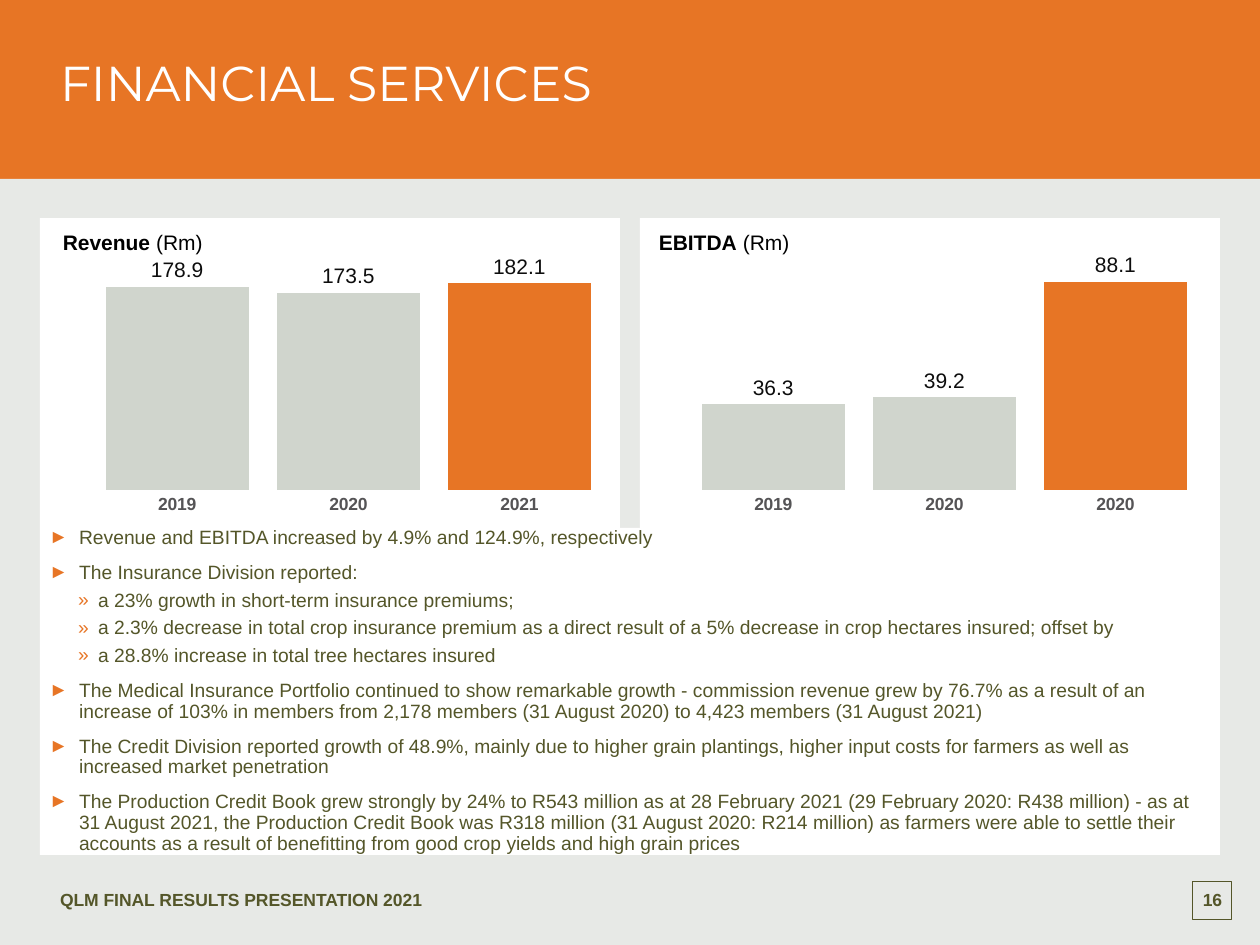
from lxml.etree import SubElement
from pptx import Presentation
from pptx.chart.data import CategoryChartData
from pptx.dml.color import RGBColor
from pptx.enum.chart import XL_CHART_TYPE, XL_LABEL_POSITION, XL_TICK_MARK
from pptx.enum.shapes import MSO_SHAPE
from pptx.enum.text import MSO_ANCHOR, MSO_AUTO_SIZE, PP_ALIGN
from pptx.oxml import parse_xml
from pptx.oxml.ns import nsdecls, qn
from pptx.util import Pt

PX = 914400 / 126
ORANGE, OLIVE, MIST, WHITE = "E77525", "545629", "E7E9E6", "FFFFFF"


def style(font, size, color, bold=False, name="Arial"):
    font.size, font.bold, font.name = Pt(size), bold, name
    font.color.rgb = RGBColor.from_string(color)


def layout(x, y, extra=""):
    return parse_xml(
        f'<c:layout {nsdecls("c")}><c:manualLayout>{extra}'
        f'<c:xMode val="edge"/><c:yMode val="edge"/><c:x val="{x}"/><c:y val="{y}"/>'
        + ('<c:w val="0.94"/><c:h val="0.717"/>' if extra else "")
        + "</c:manualLayout></c:layout>")


deck = Presentation()
deck.slide_width, deck.slide_height = round(1260 * PX), round(945 * PX)
slide = deck.slides.add_slide(deck.slide_layouts[5])
shapes = slide.shapes

blocks = [
    (0, 0, 1260, 179, ORANGE),
    (0, 179, 1260, 766, MIST),
    (640, 218, 580, 637, WHITE),
    (40, 218, 580, 637, WHITE),
    (49, 528, 1168, 327, WHITE),
    (1193, 881, 39, 39, None),
]
for *box, color in blocks:
    block = shapes.add_shape(MSO_SHAPE.RECTANGLE, *[round(n * PX) for n in box])
    block.shadow.inherit = False
    if color:
        block.fill.solid()
        block.fill.fore_color.rgb = RGBColor.from_string(color)
        block.line.fill.background()
    else:
        block.fill.background()
        block.line.color.rgb = RGBColor.from_string(OLIVE)
        block.line.width = Pt(0.5)

title = shapes.title
title.element.getparent().append(title.element)
body = shapes.add_textbox(0, 0, 0, 0)
footer = shapes.add_textbox(0, 0, 0, 0)
number = shapes.add_textbox(0, 0, 0, 0)

points = [
    (0, "Revenue and EBITDA increased by 4.9% and 124.9%, respectively"),
    (0, "The Insurance Division reported:"),
    (1, "a 23% growth in short-term insurance premiums;"),
    (1, "a 2.3% decrease in total crop insurance premium as a direct result of a 5% decrease in crop hectares insured; offset by"),
    (1, "a 28.8% increase in total tree hectares insured"),
    (0, "The Medical Insurance Portfolio continued to show remarkable growth - commission revenue grew by 76.7% as a result of an increase of 103% in members from 2,178 members (31 August 2020) to 4,423 members (31 August 2021)"),
    (0, "The Credit Division reported growth of 48.9%, mainly due to higher grain plantings, higher input costs for farmers as well as increased market penetration"),
    (0, "The Production Credit Book grew strongly by 24% to R543 million as at 28 February 2021 (29 February 2020: R438 million) - as at \v31 August 2021, the Production Credit Book was R318 million (31 August 2020: R214 million) as farmers were able to settle their accounts as a result of benefitting from good crop yields and high grain prices"),
]
texts = [
    (title, (60, 59, 1142, 54), ["FINANCIAL SERVICES"], MSO_ANCHOR.TOP, PP_ALIGN.LEFT, (28, WHITE, False, "Montserrat")),
    (body, (49, 528, 1168, 327), [text for _, text in points], MSO_ANCHOR.TOP, PP_ALIGN.LEFT, (11, OLIVE)),
    (footer, (60, 881, 1116, 39), ["QLM FINAL RESULTS PRESENTATION 2021"], MSO_ANCHOR.MIDDLE, PP_ALIGN.LEFT, (10, OLIVE, True)),
    (number, (1193, 881, 39, 39), ["16"], MSO_ANCHOR.MIDDLE, PP_ALIGN.CENTER, (10, OLIVE, True)),
]
for shape, box, lines, anchor, align, look in texts:
    shape.left, shape.top, shape.width, shape.height = [round(n * PX) for n in box]
    frame = shape.text_frame
    frame.word_wrap, frame.auto_size = True, MSO_AUTO_SIZE.NONE
    frame.vertical_anchor = anchor
    frame.margin_left = frame.margin_right = frame.margin_top = frame.margin_bottom = 0
    frame.text = lines[0]
    for line in lines[1:]:
        frame.add_paragraph().text = line
    for para in frame.paragraphs:
        para.alignment, para.line_spacing = align, 0.9
        for run in para.runs:
            style(run.font, *look)

levels = [(30, -30, 8, "►"), (49, -20, 4, "»")]
for (level, _), para in zip(points, body.text_frame.paragraphs):
    left, indent, space, mark = levels[level]
    para.level, para.space_before = level, Pt(space)
    props = para._p.get_or_add_pPr()
    props.set("marL", str(round(left * PX)))
    props.set("indent", str(round(indent * PX)))
    SubElement(SubElement(props, qn("a:buClr")), qn("a:srgbClr"), val=ORANGE)
    SubElement(props, qn("a:buFont"), typeface="Arial")
    SubElement(props, qn("a:buChar"), char=mark)

charts = [
    (59, "Revenue", ["2019", "2020", "2021"], [178.9, 173.5, 182.1], 187),
    (655, "EBITDA", ["2019", "2020", "2020"], [36.3, 39.2, 88.1], 90),
]
for left, name, years, values, top in charts:
    data = CategoryChartData(number_format="#\\ ##0.0")
    data.categories = years
    data.add_series("Series 1", values)
    box = [round(n * PX) for n in (left, 226, 546, 297)]
    chart = shapes.add_chart(XL_CHART_TYPE.COLUMN_CLUSTERED, *box, data).chart
    style(chart.font, 10, OLIVE)
    chart.has_legend = False

    head = chart.chart_title.text_frame.paragraphs[0]
    head.alignment = PP_ALIGN.LEFT
    for text, bold in ((name, True), (" (Rm)", False)):
        run = head.add_run()
        run.text = text
        style(run.font, 12, "000000", bold)

    years_axis, value_axis = chart.category_axis, chart.value_axis
    years_axis.major_tick_mark = XL_TICK_MARK.NONE
    years_axis.format.line.fill.background()
    style(years_axis.tick_labels.font, 10, "555456", True)
    value_axis.visible = value_axis.has_major_gridlines = False
    value_axis.minimum_scale, value_axis.maximum_scale = 0, top
    value_axis.major_unit = 1

    plot = chart.plots[0]
    plot.gap_width, plot.vary_by_categories = 20, False
    bars = plot.series[0]
    for part, color in ((bars, "D0D5CD"), (bars.points[2], ORANGE)):
        part.format.fill.solid()
        part.format.fill.fore_color.rgb = RGBColor.from_string(color)
    labels = bars.data_labels
    labels.show_value, labels.position = True, XL_LABEL_POSITION.OUTSIDE_END
    labels.number_format, labels.number_format_is_linked = "0.0", False
    style(labels.font, 12, "0D0D0D")

    area = chart.element.find(".//" + qn("c:plotArea"))
    heading = chart.element.find(".//" + qn("c:title"))
    for node in (area, heading):
        for old in node.findall(qn("c:layout")):
            node.remove(old)
    area.insert(0, layout(0.06, 0.173, '<c:layoutTarget val="inner"/>'))
    heading.insert(1, layout(0, 0))

deck.save("out.pptx")
